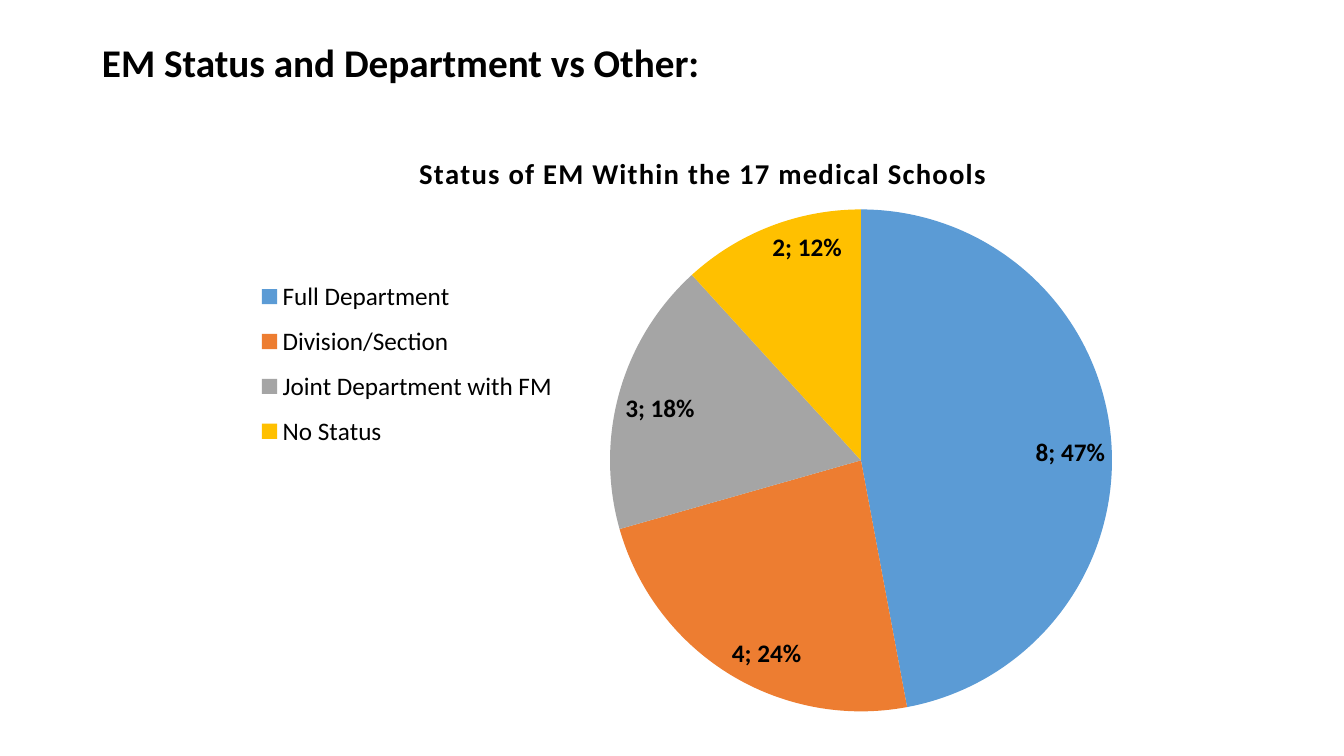
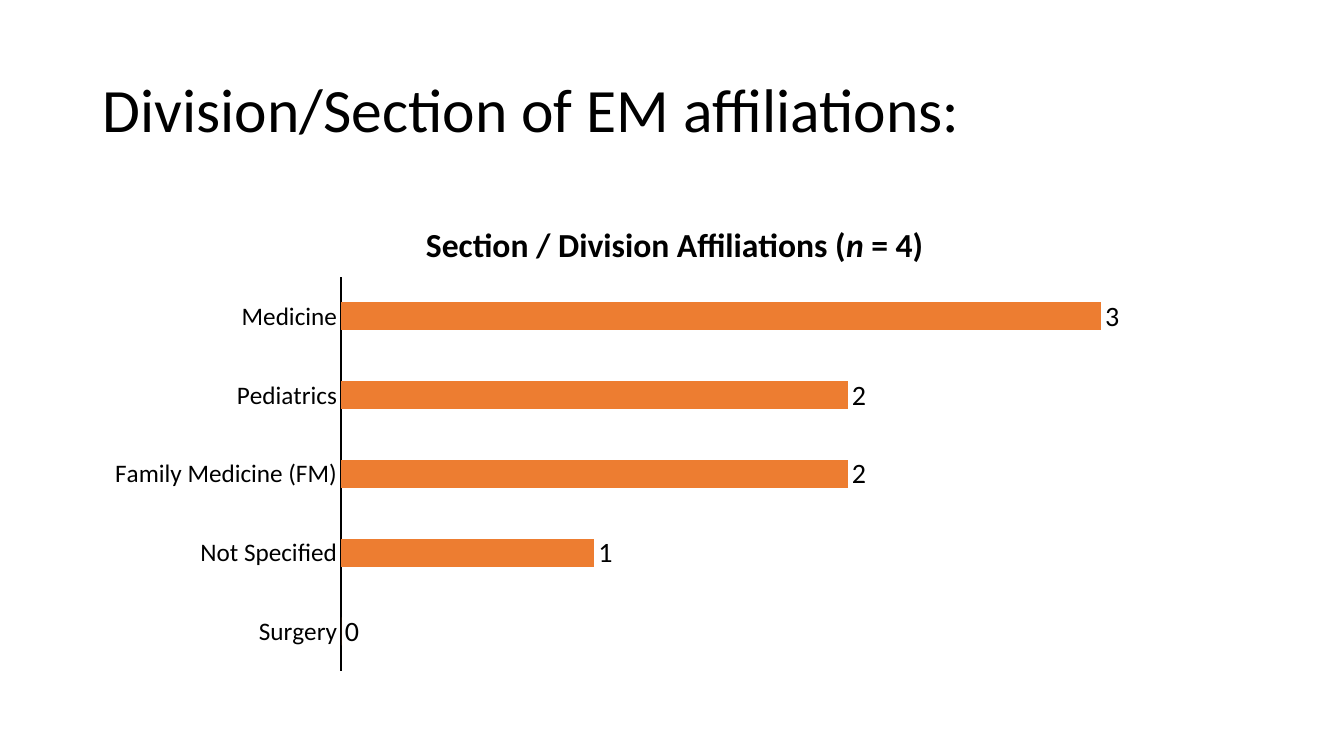
from dataclasses import dataclass

from lxml import etree
from pptx import Presentation
from pptx import util as u
from pptx.chart import data as chart_data
from pptx.dml import color
from pptx.enum import chart as ch
from pptx.enum import text
from pptx.oxml import ns

EMU_PER_PX = 12192000 / 1344


@dataclass(frozen=True)
class Theme:
    font: str = "Calibri"
    ink: str = "000000"
    blue: str = "5B9BD5"
    orange: str = "ED7D31"
    grey: str = "A5A5A5"
    gold: str = "FFC000"
    heading_small: float = 28
    heading_large: float = 44
    pie_title: float = 20.5
    bar_title: float = 24
    label: float = 18
    bar_value: float = 20


THEME = Theme()


def px(length):
    return u.Emu(round(length * EMU_PER_PX))


def rgb(code):
    return color.RGBColor.from_string(code)


def style_font(font, size, bold=False, italic=False):
    font.name = THEME.font
    font.size = u.Pt(size)
    font.bold = bold
    font.italic = italic
    font.color.rgb = rgb(THEME.ink)


def add_heading(slide, box, words, size, bold=False):
    frame = slide.shapes.add_textbox(*map(px, box)).text_frame
    frame.word_wrap = True
    frame.vertical_anchor = text.MSO_ANCHOR.MIDDLE
    line = frame.paragraphs[0]
    line.line_spacing = 0.9
    run = line.add_run()
    run.text = words
    style_font(run.font, size, bold)


def set_layout(chart, region, box, frame, inner=False):
    owner = chart._chartSpace.find(".//" + ns.qn("c:" + region))
    for old in owner.findall(ns.qn("c:layout")):
        owner.remove(old)
    layout = etree.Element(ns.qn("c:layout"))
    manual = etree.SubElement(layout, ns.qn("c:manualLayout"))
    if inner:
        etree.SubElement(manual, ns.qn("c:layoutTarget"), val="inner")
    for mode in ("xMode", "yMode"):
        etree.SubElement(manual, ns.qn("c:" + mode), val="edge")
    for key, length, whole in zip("xywh", frame, box[2:] * 2):
        etree.SubElement(manual, ns.qn("c:" + key), val=f"{length / whole:.4f}")
    owner.insert(0 if region == "plotArea" else 1, layout)


def add_chart(slide, box, kind, categories, values, plot_frame):
    table = chart_data.CategoryChartData()
    table.categories = categories
    table.add_series("Series 1", values)
    chart = slide.shapes.add_chart(kind, *map(px, box), table).chart
    style_font(chart.font, THEME.label)
    set_layout(chart, "plotArea", box, plot_frame, inner=True)
    return chart


def add_chart_title(chart, box, corner, pieces, size, spacing=0):
    chart.has_title = True
    line = chart.chart_title.text_frame.paragraphs[0]
    for words, italic in pieces:
        run = line.add_run()
        run.text = words
        style_font(run.font, size, True, italic)
        if spacing:
            run._r.get_or_add_rPr().set("spc", str(spacing))
    set_layout(chart, "title", box, corner)


def add_status_pie(slide, box):
    shares = [
        ("Full Department", 8, THEME.blue),
        ("Division/Section", 4, THEME.orange),
        ("Joint Department with FM", 3, THEME.grey),
        ("No Status", 2, THEME.gold),
    ]
    names, counts, fills = zip(*shares)
    chart = add_chart(slide, box, ch.XL_CHART_TYPE.PIE, names, counts,
                      (424, 87, 502, 503))
    add_chart_title(chart, box, (228, 27),
                    [("Status of EM Within the 17 medical Schools", False)],
                    THEME.pie_title, spacing=100)

    chart.has_legend = True
    legend = chart.legend
    legend.position = ch.XL_LEGEND_POSITION.LEFT
    legend.include_in_layout = False
    style_font(legend.font, THEME.label)
    set_layout(chart, "legend", box, (70, 145, 302, 194))

    chart.plots[0].vary_by_categories = True
    status = chart.plots[0].series[0]
    for index, fill in enumerate(fills):
        wedge = status.points[index].format.fill
        wedge.solid()
        wedge.fore_color.rgb = rgb(fill)

    labels = status.data_labels
    labels.show_value = True
    labels.show_percentage = True
    labels.position = ch.XL_LABEL_POSITION.INSIDE_END
    style_font(labels.font, THEME.label, True)
    separator = etree.Element(ns.qn("c:separator"))
    separator.text = "; "
    labels._element.find(ns.qn("c:showBubbleSize")).addnext(separator)


def add_affiliation_bars(slide, box):
    affiliations = [
        ("Surgery", 0),
        ("Not Specified", 1),
        ("Family Medicine (FM)", 2),
        ("Pediatrics", 2),
        ("Medicine", 3),
    ]
    names, counts = zip(*affiliations)
    chart = add_chart(slide, box, ch.XL_CHART_TYPE.BAR_CLUSTERED, names, counts,
                      (248, 75, 887, 394))
    add_chart_title(chart, box, (330, 19),
                    [("Section / Division Affiliations (", False),
                     ("n", True), (" = 4)", False)],
                    THEME.bar_title)
    chart.has_legend = False

    departments = chart.category_axis
    departments.major_tick_mark = ch.XL_TICK_MARK.NONE
    departments.minor_tick_mark = ch.XL_TICK_MARK.NONE
    departments.format.line.color.rgb = rgb(THEME.ink)
    departments.format.line.width = u.Pt(0.75)
    style_font(departments.tick_labels.font, THEME.label)

    scale = chart.value_axis
    scale.minimum_scale = 0
    scale.maximum_scale = 3.5
    scale.has_major_gridlines = False
    scale.visible = False

    plot = chart.plots[0]
    plot.gap_width = 182
    plot.vary_by_categories = False
    bars = plot.series[0]
    bars.format.fill.solid()
    bars.format.fill.fore_color.rgb = rgb(THEME.orange)
    labels = bars.data_labels
    labels.show_value = True
    labels.position = ch.XL_LABEL_POSITION.OUTSIDE_END
    style_font(labels.font, THEME.bar_value)


def build_status_slide(slide):
    add_heading(slide, (92, -8, 1159, 146),
                "EM Status and Department vs Other:", THEME.heading_small, True)
    add_status_pie(slide, (186, 122, 1033, 604))


def build_affiliation_slide(slide):
    add_heading(slide, (93, 40, 1159, 146),
                "Division/Section of EM affiliations:", THEME.heading_large)
    add_affiliation_bars(slide, (93, 202, 1159, 480))


def main():
    deck = Presentation()
    deck.slide_width = px(1344)
    deck.slide_height = px(756)
    for build in (build_status_slide, build_affiliation_slide):
        build(deck.slides.add_slide(deck.slide_layouts[6]))
    deck.save("out.pptx")


if __name__ == "__main__":
    main()
